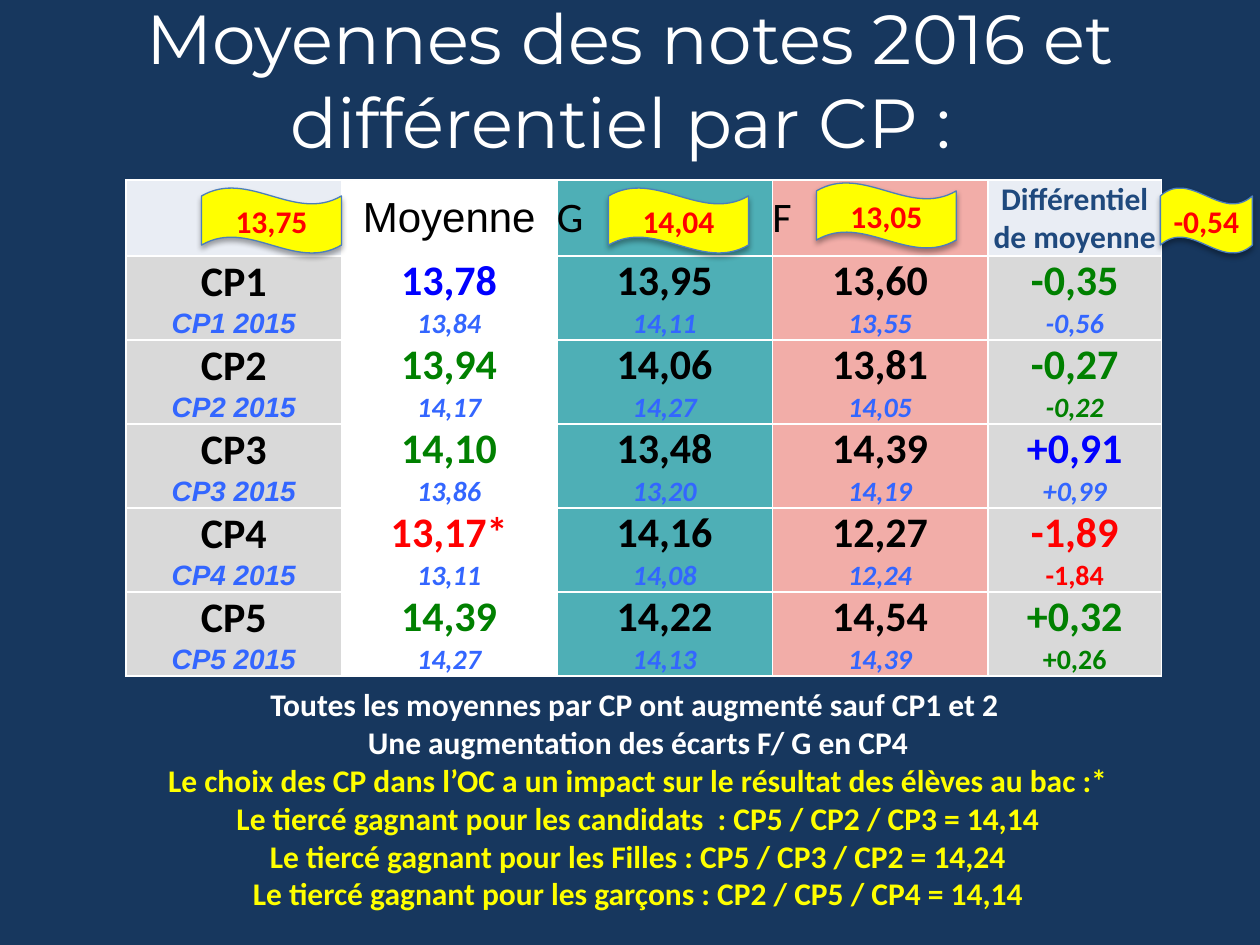
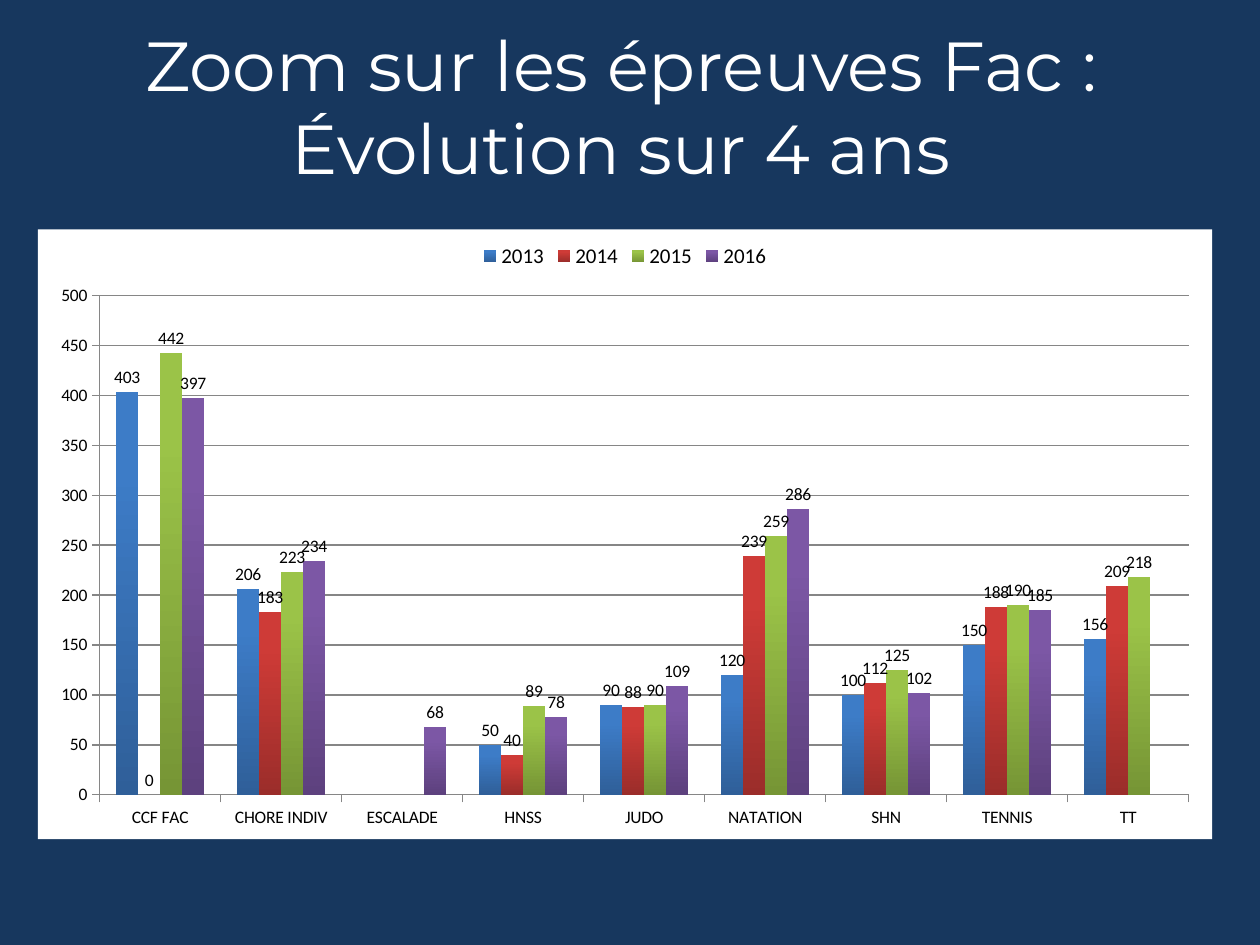
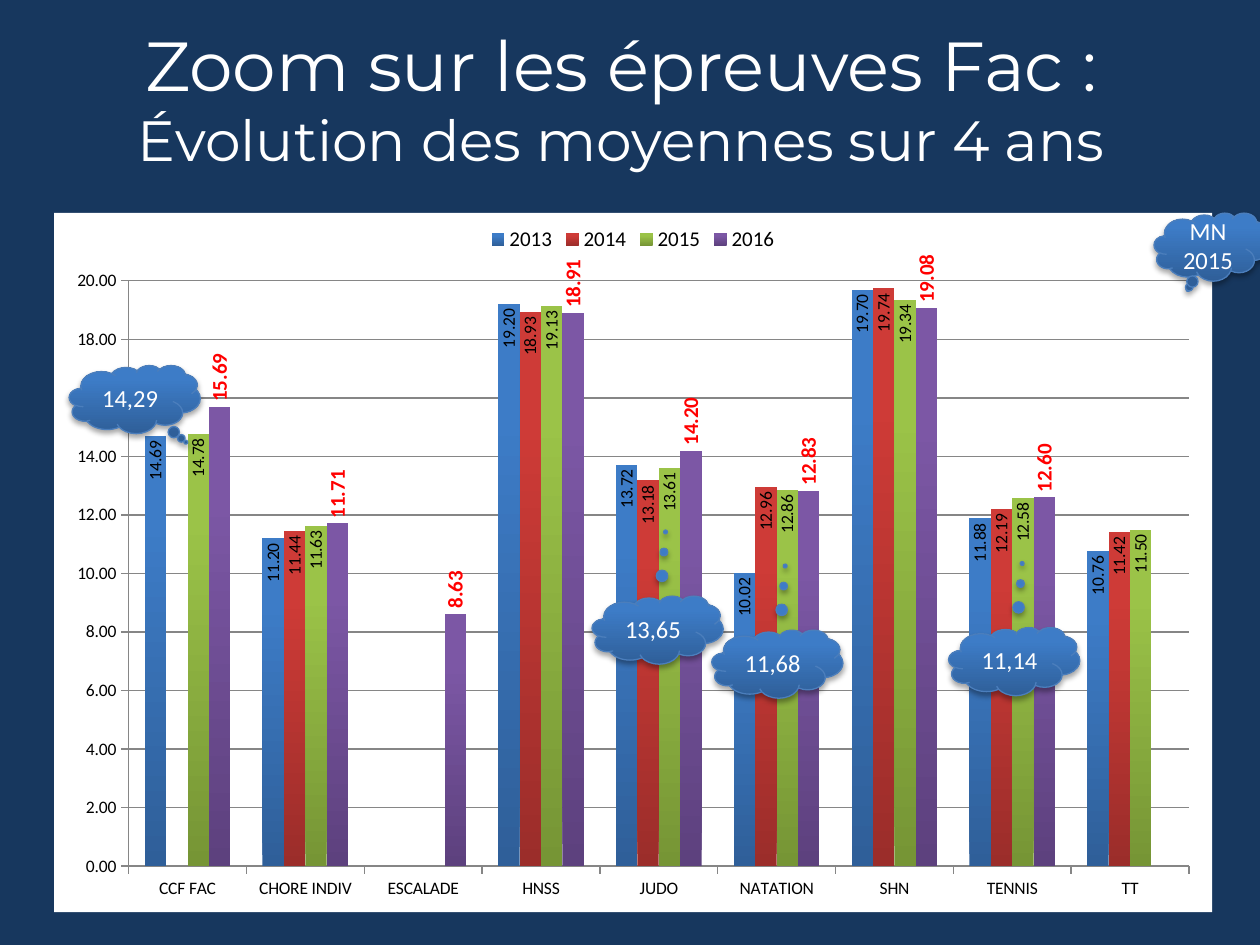
from dataclasses import dataclass
from typing import Optional

import pptx
import pptx.chart.data
import pptx.dml.color
import pptx.enum.chart
import pptx.enum.shapes
import pptx.enum.text
import pptx.oxml
import pptx.oxml.ns
import pptx.util
from lxml import etree

Inches = pptx.util.Inches
Pt = pptx.util.Pt
qn = pptx.oxml.ns.qn
Shape = pptx.enum.shapes.MSO_SHAPE
Align = pptx.enum.text.PP_ALIGN
Middle = pptx.enum.text.MSO_ANCHOR.MIDDLE
Place = pptx.enum.chart.XL_LABEL_POSITION

NAVY, WHITE, BLACK = "17375E", "FFFFFF", "000000"
YELLOW, RED, GREEN, BLUE, SKY = "FFFF00", "FF0000", "008000", "0000FF", "3366FF"
TEAL, PINK, GREY, PALE, INK = "4EAFB6", "F2ADA8", "D9D9D9", "E9EDF4", "1F497D"
EDGE, RULE = "4B7EBC", "868686"
BODY, HEAD = "Calibri", "Montserrat"
BIG, SMALL = 39.6, 32.4
AZURE = ("2F5F99", "3D7CC7")
SHADES = [AZURE, ("9B2D2A", "CE3B37"), ("769535", "9BC348"), ("5D417E", "7C57A5")]
YEARS = ["2013", "2014", "2015", "2016"]
EVENTS = ["CCF FAC", "CHORE INDIV", "ESCALADE", "HNSS", "JUDO", "NATATION",
          "SHN", "TENNIS", "TT"]


@dataclass
class Box:
    left: float
    top: float
    width: float
    height: float

    def size(self) -> tuple:
        return tuple(Inches(n) for n in (self.left, self.top, self.width, self.height))


@dataclass
class Line:
    text: str
    size: float
    color: str = WHITE
    bold: bool = False
    slant: bool = False
    face: str = BODY
    align: Align = Align.CENTER


@dataclass
class Badge:
    box: Box
    text: str
    tail: tuple = ()


@dataclass
class Scale:
    top: float
    step: float
    form: str
    upright: bool = False


@dataclass
class Row:
    name: str
    now: list
    past: list
    mean: str
    gap: str
    old: str
    slant: bool = True


COUNTS = [
    [403, 206, None, 50, 90, 120, 100, 150, 156],
    [0, 183, None, 40, 88, 239, 112, 188, 209],
    [442, 223, None, 89, 90, 259, 125, 190, 218],
    [397, 234, 68, 78, 109, 286, 102, 185, None],
]
MEANS = [
    [14.69, 11.2, None, 19.2, 13.72, 10.02, 19.7, 11.88, 10.76],
    [None, 11.44, None, 18.93, 13.18, 12.96, 19.74, 12.19, 11.42],
    [14.78, 11.63, None, 19.13, 13.61, 12.86, 19.34, 12.58, 11.5],
    [15.69, 11.71, 8.63, 18.91, 14.2, 12.83, 19.08, 12.6, None],
]
ROWS = [
    Row("CP1", ["13,78", "13,95", "13,60", "-0,35"],
        ["13,84", "14,11", "13,55", "-0,56"], BLUE, GREEN, SKY),
    Row("CP2", ["13,94", "14,06", "13,81", "-0,27"],
        ["14,17", "14,27", "14,05", "-0,22"], GREEN, GREEN, GREEN),
    Row("CP3", ["14,10", "13,48", "14,39", "+0,91"],
        ["13,86", "13,20", "14,19", "+0,99"], GREEN, BLUE, SKY),
    Row("CP4", ["13,17*", "14,16", "12,27", "-1,89"],
        ["13,11", "14,08", "12,24", "-1,84"], RED, RED, RED, False),
    Row("CP5", ["14,39", "14,22", "14,54", "+0,32"],
        ["14,27", "14,13", "14,39", "+0,26"], GREEN, GREEN, GREEN, False),
]
HEADS = [
    None,
    Line("Moyenne", 24, BLACK, face="Arial"),
    Line("G", 24, BLACK, align=Align.LEFT),
    Line("F", 24, BLACK, align=Align.LEFT),
    Line("Différentiel de moyenne", 18, INK, True),
]
NOTES = [
    ("Toutes les moyennes par CP ont augmenté sauf CP1 et 2 ", WHITE),
    ("Une augmentation des écarts F/ G en CP4", WHITE),
    ("Le choix des CP dans l’OC a un impact sur le résultat des élèves au bac :*", YELLOW),
    ("Le tiercé gagnant pour les candidats  : CP5 / CP2 / CP3 = 14,14", YELLOW),
    ("Le tiercé gagnant pour les Filles : CP5 / CP3 / CP2 = 14,24", YELLOW),
    ("Le tiercé gagnant pour les garçons : CP2 / CP5 / CP4 = 14,14", YELLOW),
]
FLAGS = [
    Badge(Box(1.6, 1.49, 1.11, 0.52), "13,75"),
    Badge(Box(4.83, 1.49, 1.11, 0.52), "14,04"),
    Badge(Box(6.48, 1.45, 1.11, 0.52), "13,05"),
    Badge(Box(9.21, 1.49, 0.73, 0.52), "-0,54"),
]
RISE = (0.06, -1.44)
CLOUDS = [
    Badge(Box(9.16, 1.69, 0.92, 0.54), "MN 2015"),
    Badge(Box(0.55, 2.9, 1.04, 0.54), "14,29", (0.39, 0.63)),
    Badge(Box(5.65, 5, 1.04, 0.54), "11,68", RISE),
    Badge(Box(4.7, 4.73, 1.04, 0.54), "13,65", RISE),
    Badge(Box(7.53, 4.98, 1.04, 0.54), "11,14", RISE),
]


def tint(code: str) -> pptx.dml.color.RGBColor:
    return pptx.dml.color.RGBColor.from_string(code)


def paint(fill, code: str) -> None:
    fill.solid()
    fill.fore_color.rgb = tint(code)


def blend(fill, pair: tuple) -> None:
    fill.gradient()
    fill.gradient_angle = 90
    for stop, code, spot in zip(fill.gradient_stops, pair, (0, 0.8)):
        stop.color.rgb = tint(code)
        stop.position = spot


def style(font, line: Line) -> None:
    font.name = line.face
    font.size = Pt(line.size)
    font.bold = line.bold
    font.italic = line.slant
    font.color.rgb = tint(line.color)


def write(frame, lines: list) -> None:
    frame.word_wrap = True
    for i, line in enumerate(lines):
        para = frame.add_paragraph() if i else frame.paragraphs[0]
        para.text = line.text
        para.alignment = line.align
        style(para.font, line)


def start(deck, box: Box, parts: list):
    slide = deck.slides.add_slide(deck.slide_layouts[6])
    paint(slide.background.fill, NAVY)
    frame = slide.shapes.add_textbox(*box.size()).text_frame
    frame.word_wrap = True
    frame.vertical_anchor = Middle
    para = frame.paragraphs[0]
    para.alignment = Align.CENTER
    for i, (text, size) in enumerate(parts):
        if i:
            para.add_line_break()
        run = para.add_run()
        run.text = text
        style(run.font, Line(text, size, face=HEAD))
    return slide


def shade(shape) -> None:
    shape.shadow.inherit = False
    cast = etree.SubElement(shape.element.spPr.find(qn("a:effectLst")), qn("a:outerShdw"),
                            blurRad="40000", dist="23000", dir="5400000", rotWithShape="0")
    color = etree.SubElement(cast, qn("a:srgbClr"), val=BLACK)
    etree.SubElement(color, qn("a:alpha"), val="35000")


def stamp(slide, badge: Badge, kind: Shape, line: Line):
    shape = slide.shapes.add_shape(kind, *badge.box.size())
    for i, value in enumerate(badge.tail):
        shape.adjustments[i] = value
    shape.line.color.rgb = tint(EDGE)
    shape.line.width = Pt(0.75)
    shade(shape)
    shape.text_frame.vertical_anchor = Middle
    write(shape.text_frame, [line])
    return shape


def dress(cell, code: str, lines: list) -> None:
    props = cell._tc.get_or_add_tcPr()
    for side in ("lnL", "lnR", "lnT", "lnB"):
        edge = etree.SubElement(props, qn("a:" + side), w="12700")
        fill = etree.SubElement(edge, qn("a:solidFill"))
        etree.SubElement(fill, qn("a:srgbClr"), val=WHITE)
    paint(cell.fill, code)
    cell.margin_left = cell.margin_right = cell.margin_top = cell.margin_bottom = 0
    cell.vertical_anchor = Middle
    if lines:
        write(cell.text_frame, lines)


def pairs(row: Row) -> list:
    cells = [[Line(row.name, 24, BLACK, True),
              Line(row.name + " 2015", 16, SKY, True, True, "Arial")]]
    fresh = [row.mean, BLACK, BLACK, row.gap]
    stale = [(SKY, True)] * 3 + [(row.old, row.slant)]
    for now, past, code, (dim, slant) in zip(row.now, row.past, fresh, stale):
        cells.append([Line(now, 24, code, True), Line(past, 16, dim, True, slant)])
    return cells


def grid(slide, box: Box) -> None:
    table = slide.shapes.add_table(len(ROWS) + 1, len(HEADS), *box.size()).table
    table.first_row = table.horz_banding = False
    for i, column in enumerate(table.columns):
        column.width = Inches(1.38 if i == 4 else 1.71)
    for i, row in enumerate(table.rows):
        row.height = Inches(0.63 if i else 0.52)
    body = [[[line] if line else [] for line in HEADS]] + [pairs(row) for row in ROWS]
    for r, cells in enumerate(body):
        side = GREY if r else PALE
        for c, (code, lines) in enumerate(zip([side, WHITE, TEAL, PINK, side], cells)):
            dress(table.cell(r, c), code, lines)


def chart(slide, box: Box, rows: list, scale: Scale) -> None:
    data = pptx.chart.data.CategoryChartData(number_format=scale.form)
    data.categories = EVENTS
    for year, values in zip(YEARS, rows):
        data.add_series(year, values)
    kind = pptx.enum.chart.XL_CHART_TYPE.COLUMN_CLUSTERED
    graph = slide.shapes.add_chart(kind, *box.size(), data).chart
    style(graph.font, Line("", 10, BLACK))
    graph.has_title = False
    graph.has_legend = True
    graph.legend.position = pptx.enum.chart.XL_LEGEND_POSITION.TOP
    graph.legend.include_in_layout = False
    style(graph.legend.font, Line("", 12, BLACK))
    back = pptx.oxml.parse_xml(
        f'<c:spPr {pptx.oxml.ns.nsdecls("c", "a")}><a:solidFill><a:srgbClr val="{WHITE}"/>'
        '</a:solidFill><a:ln><a:noFill/></a:ln></c:spPr>')
    graph.element.find(qn("c:chart")).addnext(back)

    axis = graph.value_axis
    axis.minimum_scale, axis.maximum_scale, axis.major_unit = 0, scale.top, scale.step
    axis.tick_labels.number_format = scale.form
    axis.tick_labels.number_format_is_linked = False
    axis.has_major_gridlines = True
    rules = [axis.major_gridlines.format.line]
    for each in (axis, graph.category_axis):
        each.major_tick_mark = pptx.enum.chart.XL_TICK_MARK.OUTSIDE
        rules.append(each.format.line)
    for rule in rules:
        rule.color.rgb = tint(RULE)
        rule.width = Pt(0.75)

    plot = graph.plots[0]
    plot.vary_by_categories = False
    plot.gap_width = 150
    plot.overlap = 0
    for series, pair in zip(plot.series, SHADES):
        blend(series.format.fill, pair)
        series.invert_if_negative = False
        last = scale.upright and series.name == YEARS[-1]
        labels = series.data_labels
        style(labels.font, Line("", 12, RED, True) if last else Line("", 10, BLACK))
        labels.show_value = True
        labels.number_format = scale.form
        labels.number_format_is_linked = False
        labels.position = Place.INSIDE_END if scale.upright and not last else Place.OUTSIDE_END
    if scale.upright:
        for group in graph.element.iter(qn("c:dLbls")):
            for body in group.iter(qn("a:bodyPr")):
                body.set("rot", "-5400000")
                body.set("vert", "horz")


def marks(deck) -> None:
    slide = start(deck, Box(0, 0, 10, 1.25),
                  [("Moyennes des notes 2016 et différentiel par CP : ", BIG)])
    grid(slide, Box(1, 1.43, 8.22, 3.67))
    notes = slide.shapes.add_textbox(*Box(0.13, 5.39, 9.87, 1.92).size())
    write(notes.text_frame, [Line(text, 18, code, True) for text, code in NOTES])
    for flag in FLAGS:
        shape = stamp(slide, flag, Shape.WAVE, Line(flag.text, 18, RED, True))
        paint(shape.fill, YELLOW)


def zoom(deck, top: float, second: tuple, box: Box, rows: list, scale: Scale,
         clouds: Optional[list] = None) -> None:
    slide = start(deck, Box(0.43, top, 9, 1.25),
                  [("Zoom sur les épreuves Fac :", BIG), second])
    chart(slide, box, rows, scale)
    for cloud in clouds or []:
        shape = stamp(slide, cloud, Shape.CLOUD_CALLOUT, Line(cloud.text, 14))
        blend(shape.fill, AZURE)


def main() -> None:
    deck = pptx.Presentation()
    deck.slide_width, deck.slide_height = Inches(10), Inches(7.5)
    marks(deck)
    zoom(deck, 0.21, ("Évolution sur 4 ans", BIG), Box(0.3, 1.82, 9.32, 4.84),
         COUNTS, Scale(500, 50, "General"))
    zoom(deck, 0.15, ("Évolution des moyennes sur 4 ans", SMALL),
         Box(0.43, 1.69, 9.19, 5.55), MEANS, Scale(20, 2, "0.00", True), CLOUDS)
    deck.save("out.pptx")


if __name__ == "__main__":
    main()
